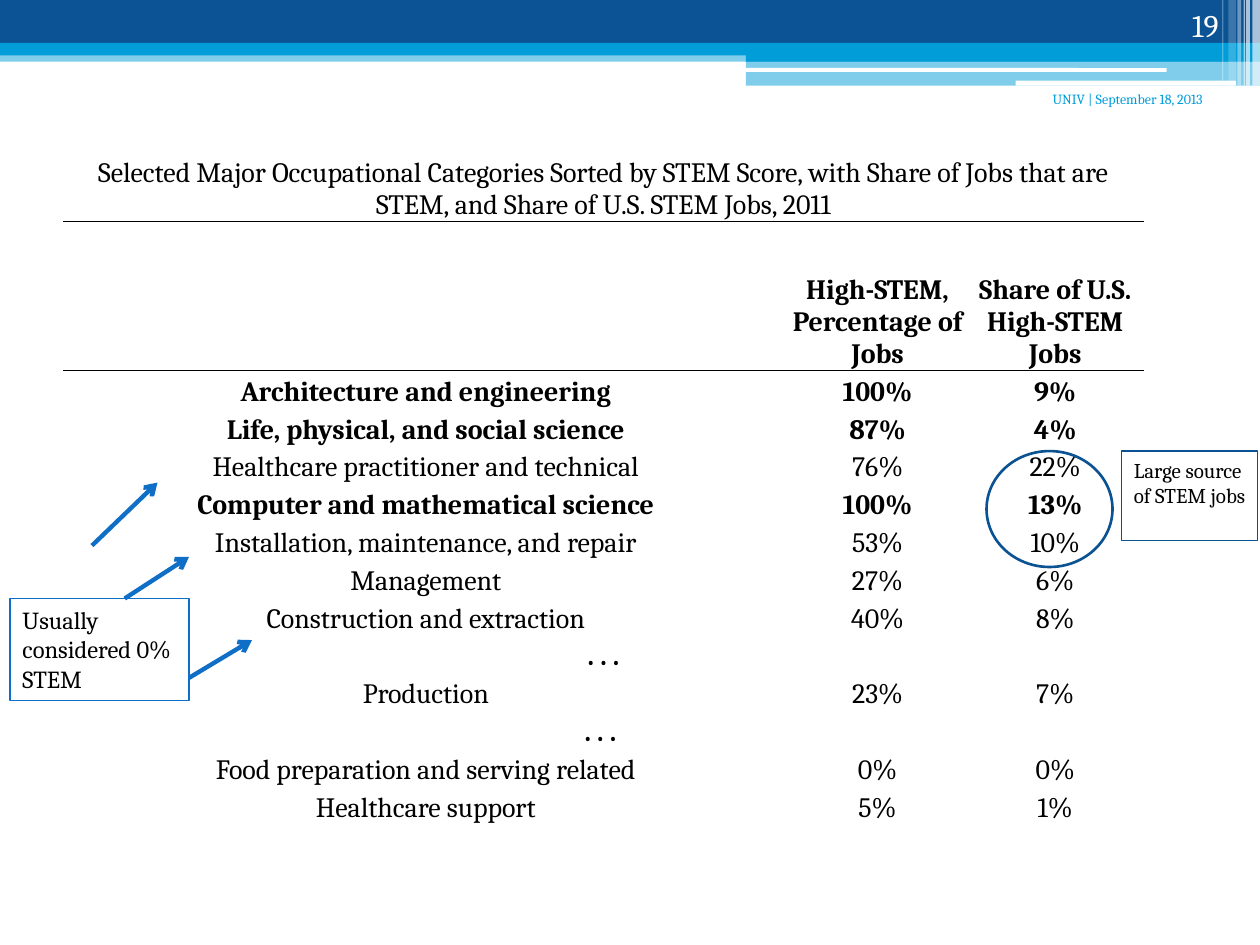
import pptx
import pptx.util
import pptx.dml.color
import pptx.enum.shapes
import pptx.enum.text
import pptx.oxml.ns
from lxml import etree

Inches = pptx.util.Inches
Pt = pptx.util.Pt
Kind = pptx.enum.shapes.MSO_SHAPE
Align = pptx.enum.text.PP_ALIGN
Anchor = pptx.enum.text.MSO_ANCHOR

THEME = {
    "font": "Cambria", "ink": "000000", "white": "FFFFFF", "navy": "0B5394",
    "sky": "009DD9", "blue": "0F6FC6", "ring": "0B5292",
    "date": 8, "page": 18, "table": 16, "note": 14, "small": 12,
}

BANDS = [
    (Kind.RECTANGLE, 0, 0.4, 10, 0.09, "sky", 50),
    (Kind.RECTANGLE, 0, 0, 10, 0.34, "navy", 100),
    (Kind.RECTANGLE, 0, 0.34, 10, 0.1, "sky", 100),
    (Kind.RECTANGLE, 5.92, 0.39, 4.08, 0.1, "sky", 100),
    (Kind.RECTANGLE, 5.92, 0.48, 4.08, 0.2, "sky", 50),
    (Kind.ROUNDED_RECTANGLE, 5.91, 0.54, 3.35, 0.03, "white", 100),
    (Kind.ROUNDED_RECTANGLE, 8.06, 0.64, 1.75, 0.04, "white", 100),
]
STRIPES = [
    (9.94, 0.06, 0.68, 65), (9.89, 0.03, 0.68, 65), (9.87, 0.01, 0.68, 60),
    (9.82, 0.03, 0.68, 40), (9.75, 0.06, 0.64, 20), (9.7, 0.01, 0.64, 30),
]
LABELS = [
    ("UNIV | September 18, 2013 ", 5.75, 0.67, 3.92, 0.5, "date", "sky", Anchor.TOP),
    ("19", 8.94, 0, 0.83, 0.4, "page", "white", Anchor.BOTTOM),
]
TITLE = ("Selected Major Occupational Categories Sorted by STEM Score, with Share "
         "of Jobs that are STEM, and Share of U.S. STEM Jobs, 2011")
ROWS = [
    (False, TITLE),
    (True, "", "High-STEM, Percentage of Jobs", "Share of U.S. High-STEM Jobs"),
    (True, "Architecture and engineering", "100%", "9%"),
    (True, "Life, physical, and social science", "87%", "4%"),
    (False, "Healthcare practitioner and technical", "76%", "22%"),
    (True, "Computer and mathematical science", "100%", "13%"),
    (False, "Installation, maintenance, and repair", "53%", "10%"),
    (False, "Management", "27%", "6%"),
    (False, "Construction and extraction", "40%", "8%"),
    (True, ". . ."),
    (False, "Production", "23%", "7%"),
    (True, ". . . "),
    (False, "Food preparation and serving related", "0%", "0%"),
    (False, "Healthcare support", "5%", "1%"),
    (False, ""),
]
WIDTHS = [5.76, 1.41, 1.41]
HEIGHTS = [0.59, 1.18] + [0.3] * (len(ROWS) - 2)
RULES = {0: "B", 1: "TB", 2: "T"}
NOTES = [
    ("Usually considered 0% STEM", 0.08, 4.75, 1.42, 0.81, "note", "blue"),
    ("Large source of STEM jobs", 8.9, 3.58, 1.08, 0.71, "small", "ring"),
]
ARROWS = [(0.73, 4.33, 1.25, 3.83), (0.99, 4.75, 1.5, 4.42), (1.5, 5.38, 2, 5.08)]


def color(name):
    return pptx.dml.color.RGBColor.from_string(THEME[name])


def child(node, tag, **attrs):
    return etree.SubElement(node, pptx.oxml.ns.qn(tag), **attrs)


def write(frame, text, size, tint="ink", bold=False, align=Align.LEFT):
    para = frame.paragraphs[0]
    para.alignment = align
    if text:
        run = para.add_run()
        run.text = text
        run.font.name = THEME["font"]
        run.font.size = Pt(THEME[size])
        run.font.bold = bold
        run.font.color.rgb = color(tint)
    else:
        child(para._p, "a:endParaRPr", sz=str(THEME[size] * 100))


def draw(slide, kind, x, y, w, h, fill=None, alpha=100, edge=None, width=0.75):
    shape = slide.shapes.add_shape(kind, Inches(x), Inches(y), Inches(w), Inches(h))
    shape.shadow.inherit = False
    if fill:
        shape.fill.solid()
        shape.fill.fore_color.rgb = color(fill)
        if alpha < 100:
            paint = shape._element.spPr.find(".//" + pptx.oxml.ns.qn("a:srgbClr"))
            child(paint, "a:alpha", val=str(alpha * 1000))
    else:
        shape.fill.background()
    if edge:
        shape.line.color.rgb = color(edge)
        shape.line.width = Pt(width)
    else:
        shape.line.fill.background()
    return shape


def rule(cell, sides):
    props = cell._tc.get_or_add_tcPr()
    for i, side in enumerate("LRTB"):
        line = etree.Element(pptx.oxml.ns.qn("a:ln" + side), w=str(Pt(0.5)))
        props.insert(i, line)
        if side in sides:
            child(child(line, "a:solidFill"), "a:srgbClr", val=THEME["ink"])
        else:
            child(line, "a:noFill")


def add_grid(slide):
    frame = slide.shapes.add_table(len(ROWS), len(WIDTHS), Inches(0.5), Inches(1.17),
                                   Inches(sum(WIDTHS)), Inches(sum(HEIGHTS)))
    table = frame.table
    table.first_row = False
    table.horz_banding = False
    for col, width in zip(table.columns, WIDTHS):
        col.width = Inches(width)
    for r, (bold, *texts) in enumerate(ROWS):
        table.rows[r].height = Inches(HEIGHTS[r])
        if len(texts) == 1:
            table.cell(r, 0).merge(table.cell(r, len(WIDTHS) - 1))
            texts += [""] * (len(WIDTHS) - 1)
        for c, text in enumerate(texts):
            cell = table.cell(r, c)
            cell.margin_left = cell.margin_right = cell.margin_top = Inches(0.01)
            cell.margin_bottom = 0
            cell.vertical_anchor = Anchor.BOTTOM
            cell.fill.background()
            rule(cell, RULES.get(r, ""))
            write(cell.text_frame, text, "table", bold=bold, align=Align.CENTER)


def add_arrow(slide, *ends):
    arrow = slide.shapes.add_connector(pptx.enum.shapes.MSO_CONNECTOR.STRAIGHT,
                                       *map(Inches, ends))
    arrow.line.color.rgb = color("blue")
    arrow.line.width = Pt(2.5)
    child(arrow.line._get_or_add_ln(), "a:tailEnd", type="arrow")
    child(arrow._element.spPr, "a:effectLst")


def main():
    deck = pptx.Presentation()
    deck.slide_width, deck.slide_height = Inches(10), Inches(7.5)
    slide = deck.slides.add_slide(deck.slide_layouts[6])
    for band in BANDS:
        draw(slide, *band)
    for x, w, h, alpha in STRIPES:
        draw(slide, Kind.RECTANGLE, x, 0, w, h, "white", alpha)
    for text, x, y, w, h, size, tint, anchor in LABELS:
        box = slide.shapes.add_textbox(Inches(x), Inches(y), Inches(w), Inches(h))
        box.text_frame.word_wrap = True
        box.text_frame.vertical_anchor = anchor
        write(box.text_frame, text, size, tint, align=Align.RIGHT)
    add_grid(slide)
    for text, x, y, w, h, size, edge in NOTES:
        frame = draw(slide, Kind.RECTANGLE, x, y, w, h, "white", edge=edge).text_frame
        frame.word_wrap = True
        frame.margin_right = Inches(0.06)
        frame.vertical_anchor = Anchor.TOP
        frame.auto_size = pptx.enum.text.MSO_AUTO_SIZE.SHAPE_TO_FIT_TEXT
        write(frame, text, size)
    for ends in ARROWS:
        add_arrow(slide, *ends)
    draw(slide, Kind.OVAL, 7.83, 3.58, 1, 0.92, edge="ring", width=1.5)
    deck.save("out.pptx")


if __name__ == "__main__":
    main()
